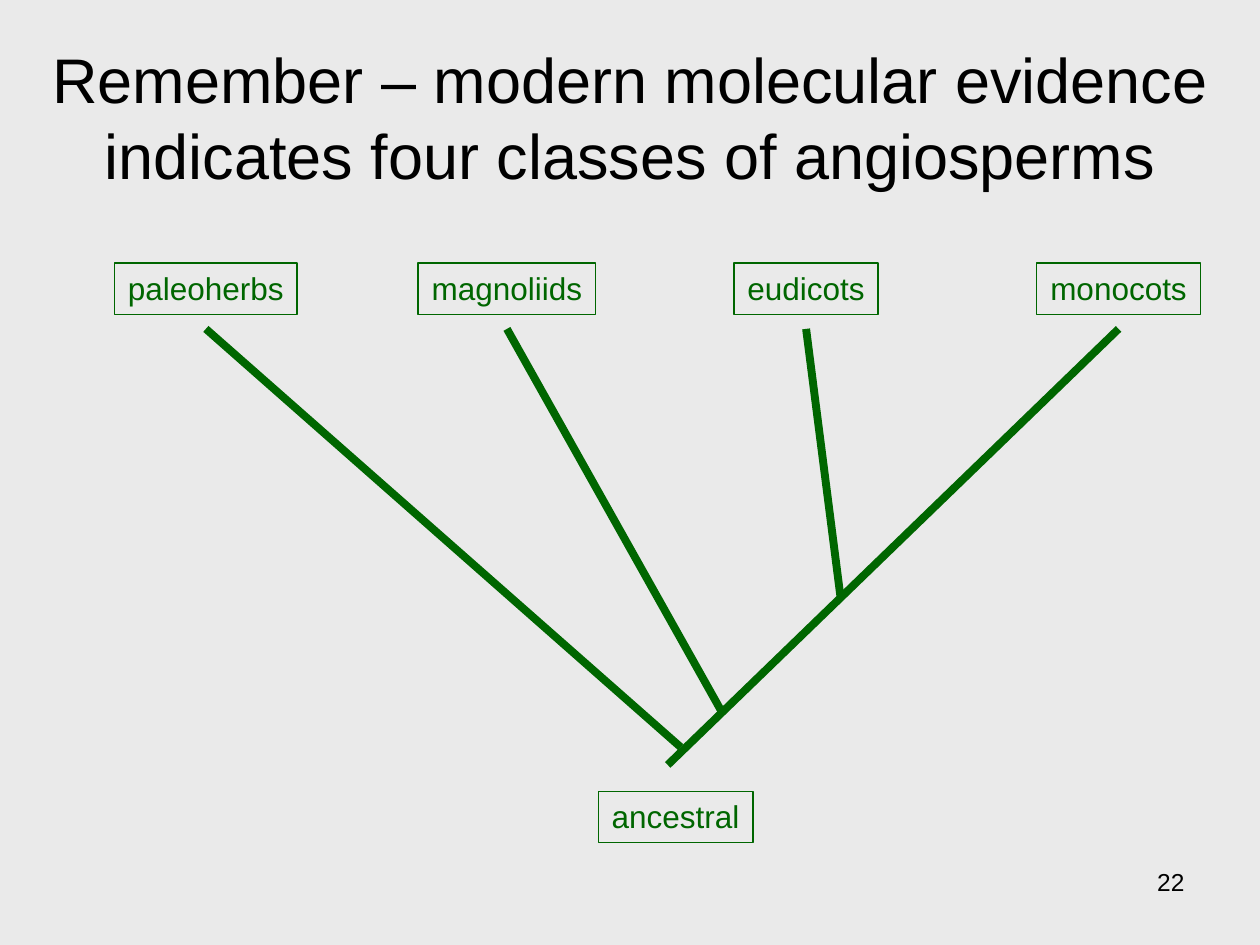
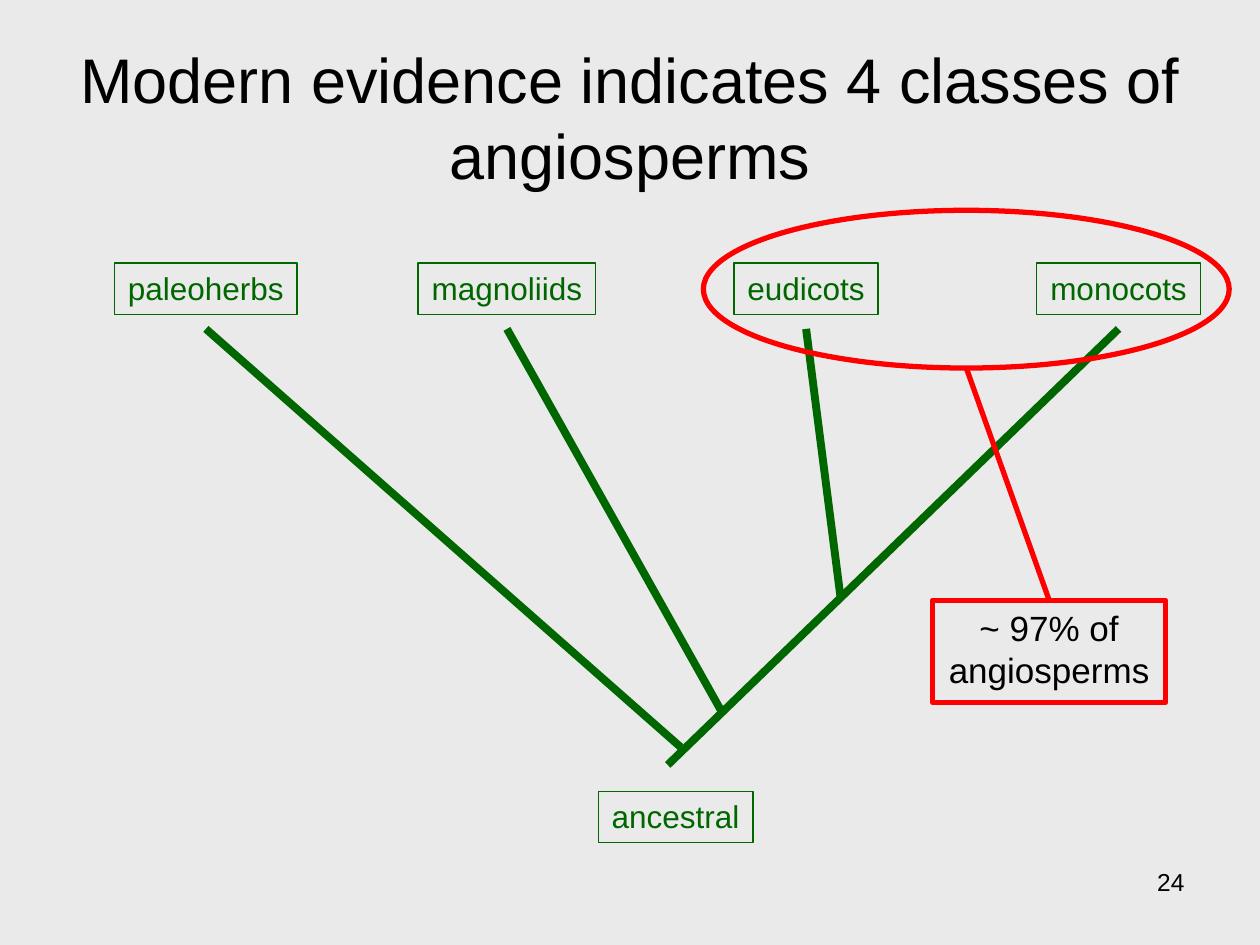
from lxml.etree import SubElement
from pptx import Presentation
from pptx.dml.color import RGBColor
from pptx.enum.shapes import MSO_CONNECTOR as Link, MSO_SHAPE as Preset
from pptx.enum.text import MSO_ANCHOR as Anchor, MSO_AUTO_SIZE as Fit, PP_ALIGN as Align
from pptx.oxml.ns import qn
from pptx.util import Cm, Pt

COLORS = {"back": "EAEAEA", "text": "000000", "tree": "006600", "mark": "FF0000"}
FONT = "Arial"
LABEL_TOP, LABEL_HEIGHT, TIP_GAP = 5.3, 1.04, 0.29
CLASSES = [
    ("monocots", 20.9, 3.3, (13.46, 15.42)),
    ("eudicots", 14.8, 2.9, (16.94, 12.01)),
    ("magnoliids", 8.43, 3.58, (14.55, 14.35)),
    ("paleoherbs", 2.31, 3.68, (13.72, 15.06)),
]


def color(name):
    return RGBColor.from_string(COLORS[name])


def write(frame, text, size=18, ink="text", align=Align.CENTER,
          anchor=Anchor.TOP, wrap=True, fit=Fit.NONE):
    frame.word_wrap = wrap
    frame.auto_size = fit
    frame.vertical_anchor = anchor
    para = frame.paragraphs[0]
    para.alignment = align
    span = para.add_run()
    span.text = text
    span.font.name = FONT
    span.font.size = Pt(size)
    span.font.color.rgb = color(ink)


class Slides:
    def __init__(self):
        self.deck = Presentation()
        self.deck.slide_width, self.deck.slide_height = Cm(25.4), Cm(19.05)
        fill = self.deck.slide_master.background.fill
        fill.solid()
        fill.fore_color.rgb = color("back")
        self.page = None

    def start(self, title, number):
        self.page = self.deck.slides.add_slide(self.deck.slide_layouts[5])
        heading = self.page.shapes.title
        heading.left, heading.top = Cm(0.6), Cm(0.76)
        heading.width, heading.height = Cm(24.2), Cm(3.18)
        write(heading.text_frame, title, size=36, anchor=Anchor.MIDDLE)
        box = self.page.shapes.add_textbox(Cm(18.21), Cm(17.35), Cm(5.92), Cm(1.32))
        write(box.text_frame, str(number), size=14, align=Align.RIGHT)

    def outline(self, shapes, preset, left, top, width, height, ink, weight):
        box = shapes.add_shape(preset, Cm(left), Cm(top), Cm(width), Cm(height))
        box.shadow.inherit = False
        box.fill.background()
        box.line.color.rgb = color(ink)
        box.line.width = Pt(weight)
        return box

    def label(self, shapes, text, left, top, width):
        box = self.outline(shapes, Preset.RECTANGLE, left, top, width,
                           LABEL_HEIGHT, "tree", 0.75)
        write(box.text_frame, text, ink="tree", wrap=False, fit=Fit.SHAPE_TO_FIT_TEXT)

    def line(self, shapes, start, end, ink, weight):
        points = [Cm(value) for value in (*start, *end)]
        link = shapes.add_connector(Link.STRAIGHT, *points)
        link.line.color.rgb = color(ink)
        link.line.width = Pt(weight)
        SubElement(link._element.spPr, qn("a:effectLst"))
        return link

    def tree(self):
        shapes = self.page.shapes.add_group_shape().shapes
        tip_top = LABEL_TOP + LABEL_HEIGHT + TIP_GAP
        for name, left, width, joint in CLASSES:
            self.line(shapes, joint, (left + width / 2, tip_top), "tree", 4.5)
        self.label(shapes, "ancestral", 12.06, 15.95, 3.12)
        for name, left, width, joint in reversed(CLASSES):
            self.label(shapes, name, left, LABEL_TOP, width)

    def callout(self, text):
        shapes = self.page.shapes
        self.outline(shapes, Preset.OVAL, 14.18, 4.24, 10.6, 3.18, "mark", 3)
        link = self.line(shapes, (19.48, 7.42), (21.15, 12.1), "mark", 3)
        box = self.outline(shapes, Preset.RECTANGLE, 18.8, 12.1, 4.7, 2.06, "mark", 3)
        write(box.text_frame, text, size=20, fit=Fit.SHAPE_TO_FIT_TEXT)
        link.end_connect(box, 0)


def main():
    slides = Slides()
    slides.start("Remember – modern molecular evidence indicates four classes of angiosperms", 22)
    slides.tree()
    slides.start("Modern evidence indicates 4 classes of angiosperms", 24)
    slides.tree()
    slides.callout("~ 97% of angiosperms")
    slides.deck.save("out.pptx")


if __name__ == "__main__":
    main()
